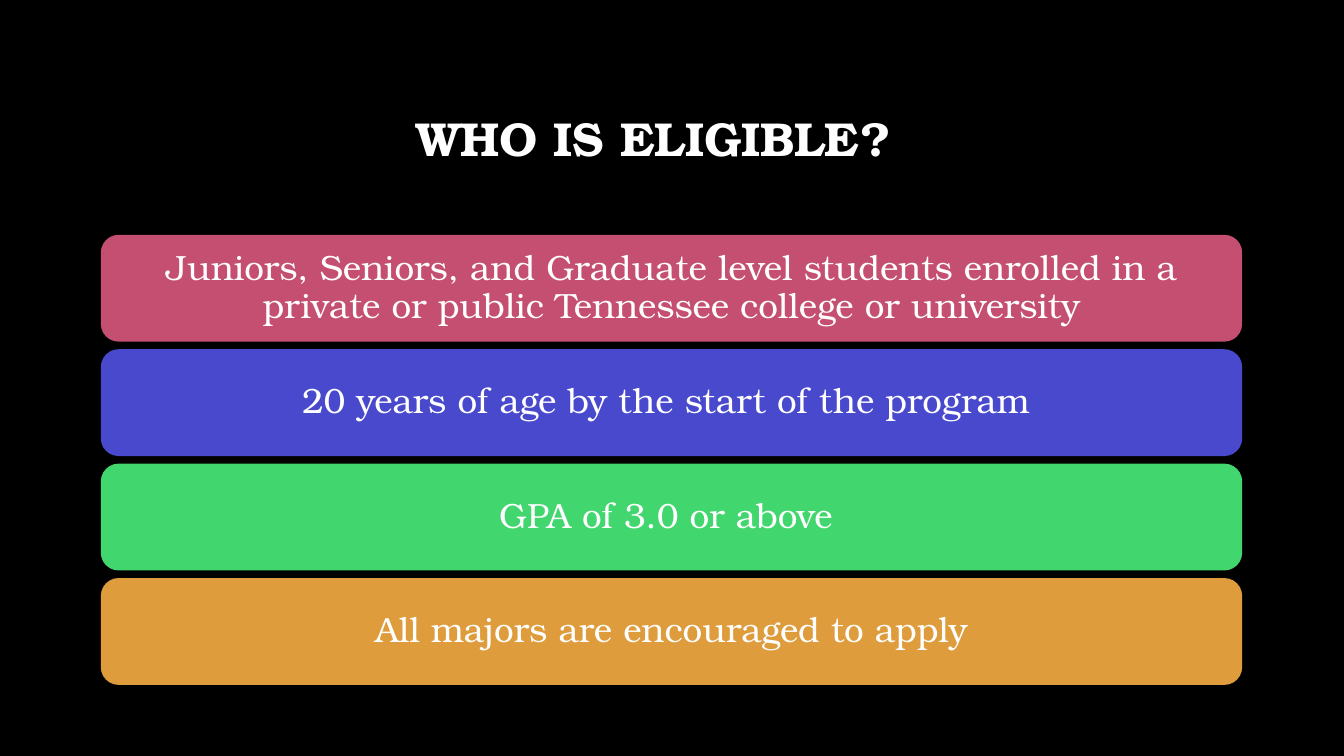
from pptx import Presentation
from pptx.dml.color import RGBColor
from pptx.enum.shapes import MSO_SHAPE
from pptx.enum.text import MSO_ANCHOR, MSO_AUTO_SIZE, PP_ALIGN
from pptx.util import Inches, Pt

FONT = "TeX Gyre Bonum"
BLACK = RGBColor(0x00, 0x00, 0x00)
WHITE = RGBColor(0xFF, 0xFF, 0xFF)
ROSE = RGBColor(0xC5, 0x4F, 0x71)
BLUE = RGBColor(0x49, 0x49, 0xCD)
GREEN = RGBColor(0x42, 0xD6, 0x6E)
AMBER = RGBColor(0xDE, 0x9C, 0x3C)

# Grid: one column of equal rows
LEFT, WIDTH = 1, 11.32
TOP, ROW, STEP = 2.33, 1.06, 1.135

RULES = [
    ("Juniors, Seniors, and Graduate level students enrolled in a "
     "private or public Tennessee college or university", ROSE),
    ("20 years of age by the start of the program ", BLUE),
    ("GPA of 3.0 or above ", GREEN),
    ("All majors are encouraged to apply", AMBER),
]


def write(shape, text, size=25, bold=False, inset=0.15, right=0.15):
    """Put centred white text in a shape."""
    frame = shape.text_frame
    frame.word_wrap = True
    frame.auto_size = MSO_AUTO_SIZE.NONE
    frame.vertical_anchor = MSO_ANCHOR.MIDDLE
    frame.margin_left = frame.margin_top = frame.margin_bottom = Inches(inset)
    frame.margin_right = Inches(right)
    line = frame.paragraphs[0]
    line.alignment = PP_ALIGN.CENTER
    line.line_spacing = 0.9
    line.space_before = Pt(0)
    run = line.add_run()
    run.text = text
    font = run.font
    font.name, font.size, font.bold = FONT, Pt(size), bold
    font.color.rgb = WHITE


def add_title(slide, text):
    title = slide.shapes.title
    title.left, title.top = Inches(LEFT), Inches(0.67)
    title.width, title.height = Inches(WIDTH), Inches(1.45)
    # The wider right inset sets the heading left of centre
    write(title, text, size=34, bold=True, inset=0.1, right=0.46)


def add_bar(slide, row, text, color):
    bar = slide.shapes.add_shape(
        MSO_SHAPE.ROUNDED_RECTANGLE, Inches(LEFT), Inches(TOP + row * STEP),
        Inches(WIDTH), Inches(ROW))
    bar.shadow.inherit = False
    bar.fill.solid()
    bar.fill.fore_color.rgb = color
    bar.line.fill.background()
    write(bar, text)


def main():
    deck = Presentation()
    deck.slide_width, deck.slide_height = Inches(13.33), Inches(7.5)
    slide = deck.slides.add_slide(deck.slide_layouts[5])

    # Background
    fill = slide.background.fill
    fill.solid()
    fill.fore_color.rgb = BLACK

    # Heading and bars
    add_title(slide, "WHO IS ELIGIBLE?")
    for row, (text, color) in enumerate(RULES):
        add_bar(slide, row, text, color)

    deck.save("out.pptx")


if __name__ == "__main__":
    main()
